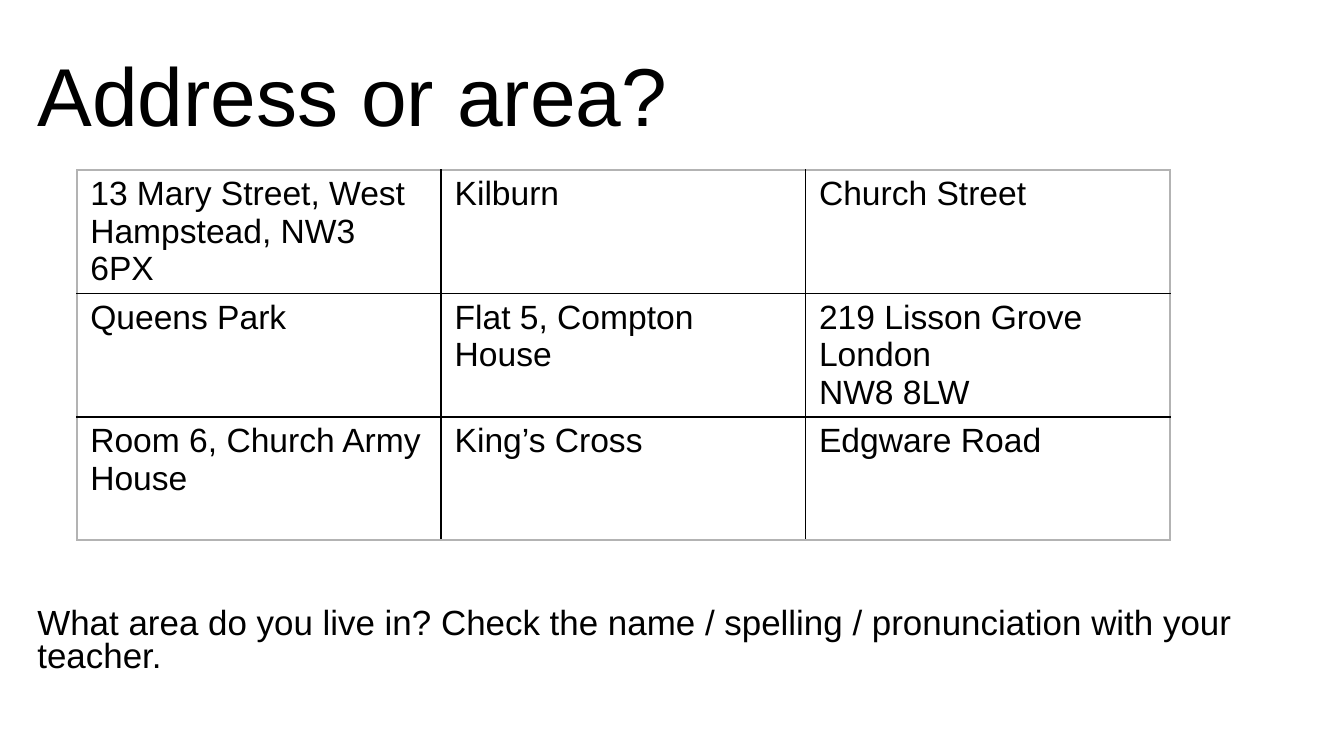
import dataclasses

import pptx
import pptx.dml.color
import pptx.enum.text
import pptx.oxml
import pptx.oxml.ns
import pptx.util

Pt = pptx.util.Pt
Align = pptx.enum.text.PP_ALIGN
Anchor = pptx.enum.text.MSO_ANCHOR


@dataclasses.dataclass(frozen=True)
class Theme:
    """Colours, font and type sizes of the slide."""
    font: str = "Arial"
    ink: str = "000000"
    edge: str = "B3B3B3"
    title_size: float = 44
    body_size: float = 18.7
    cell_size: float = 18


def write(frame, text, *, font, size, color, line_spacing=None):
    """Fill a text frame, one left-aligned paragraph per line of text."""
    for index, line in enumerate(text.split("\n")):
        paragraph = frame.add_paragraph() if index else frame.paragraphs[0]
        paragraph.alignment = Align.LEFT
        paragraph.space_before = Pt(0)
        if line_spacing:
            paragraph.line_spacing = line_spacing
        run = paragraph.add_run()
        run.text = line
        run.font.name = font
        run.font.size = Pt(size)
        run.font.color.rgb = pptx.dml.color.RGBColor.from_string(color)


class SlideBuilder:
    """Holds the theme and the slide being built."""

    def __init__(self, slide, theme):
        self.slide = slide
        self.theme = theme

    def place(self, placeholder, box, top_inset=0):
        """Move a placeholder and set its insets."""
        placeholder.left, placeholder.top, placeholder.width, placeholder.height = map(Pt, box)
        frame = placeholder.text_frame
        frame.margin_left = frame.margin_right = frame.margin_bottom = Pt(0)
        frame.margin_top = Pt(top_inset)
        frame.word_wrap = True
        frame.auto_size = pptx.enum.text.MSO_AUTO_SIZE.NONE
        return frame

    def title(self, text, box):
        """Write the slide title."""
        frame = self.place(self.slide.shapes.title, box)
        frame.vertical_anchor = Anchor.MIDDLE
        write(frame, text, font=self.theme.font, size=self.theme.title_size, color=self.theme.ink)

    def prompt(self, text, box, top_inset):
        """Write the unbulleted question below the table."""
        frame = self.place(self.slide.placeholders[1], box, top_inset)
        frame.vertical_anchor = Anchor.TOP
        write(frame, text, font=self.theme.font, size=self.theme.body_size,
              color=self.theme.ink, line_spacing=0.8)
        for paragraph in frame.paragraphs:
            properties = paragraph._p.get_or_add_pPr()
            properties.set("marL", "0")
            properties.set("indent", "0")
            properties.append(pptx.oxml.parse_xml(
                f"<a:buNone {pptx.oxml.ns.nsdecls('a')}/>"))

    def border(self, cell, colors):
        """Draw the left, right, top and bottom lines of a cell."""
        properties = cell._tc.get_or_add_tcPr()
        for index, (side, color) in enumerate(zip("LRTB", colors)):
            properties.insert(index, pptx.oxml.parse_xml(
                f'<a:ln{side} {pptx.oxml.ns.nsdecls("a")} w="{Pt(1)}"><a:solidFill>'
                f'<a:srgbClr val="{color}"/></a:solidFill></a:ln{side}>'))

    def table(self, rows, left, top, column_width, row_height):
        """Add an even grid with dark inner lines and a pale outer edge."""
        row_count, column_count = len(rows), len(rows[0])
        grid = self.slide.shapes.add_table(
            row_count, column_count, Pt(left), Pt(top),
            Pt(column_width * column_count), Pt(row_height * row_count)).table
        grid.first_row = grid.horz_banding = False
        for column in grid.columns:
            column.width = Pt(column_width)
        for r, row in enumerate(rows):
            grid.rows[r].height = Pt(row_height)
            for c, place in enumerate(row):
                cell = grid.cell(r, c)
                cell.margin_left = cell.margin_right = Pt(7.2)
                cell.margin_top = cell.margin_bottom = Pt(2.88)
                cell.fill.background()
                write(cell.text_frame, place, font=self.theme.font,
                      size=self.theme.cell_size, color=self.theme.ink)
                outer = (c == 0, c == column_count - 1, r == 0, r == row_count - 1)
                self.border(cell, [self.theme.edge if side else self.theme.ink
                                   for side in outer])


def main():
    """Build and save the presentation."""
    deck = pptx.Presentation()
    deck.slide_width, deck.slide_height = Pt(720), Pt(405)
    builder = SlideBuilder(deck.slides.add_slide(deck.slide_layouts[1]), Theme())
    builder.title("Address or area?", (20, 16.5, 663, 67.5))
    builder.prompt("What area do you live in? Check the name / spelling / "
                   "pronunciation with your teacher.", (20, 82, 663, 292), top_inset=244)
    places = [
        ["13 Mary Street, West Hampstead, NW3 6PX", "Kilburn", "Church Street"],
        ["Queens Park", "Flat 5, Compton House", "219 Lisson Grove\nLondon\nNW8 8LW"],
        ["Room 6, Church Army House", "King’s Cross", "Edgware Road"],
    ]
    builder.table(places, left=41.2, top=91, column_width=195.2, row_height=65.9)
    deck.save("out.pptx")


if __name__ == "__main__":
    main()
